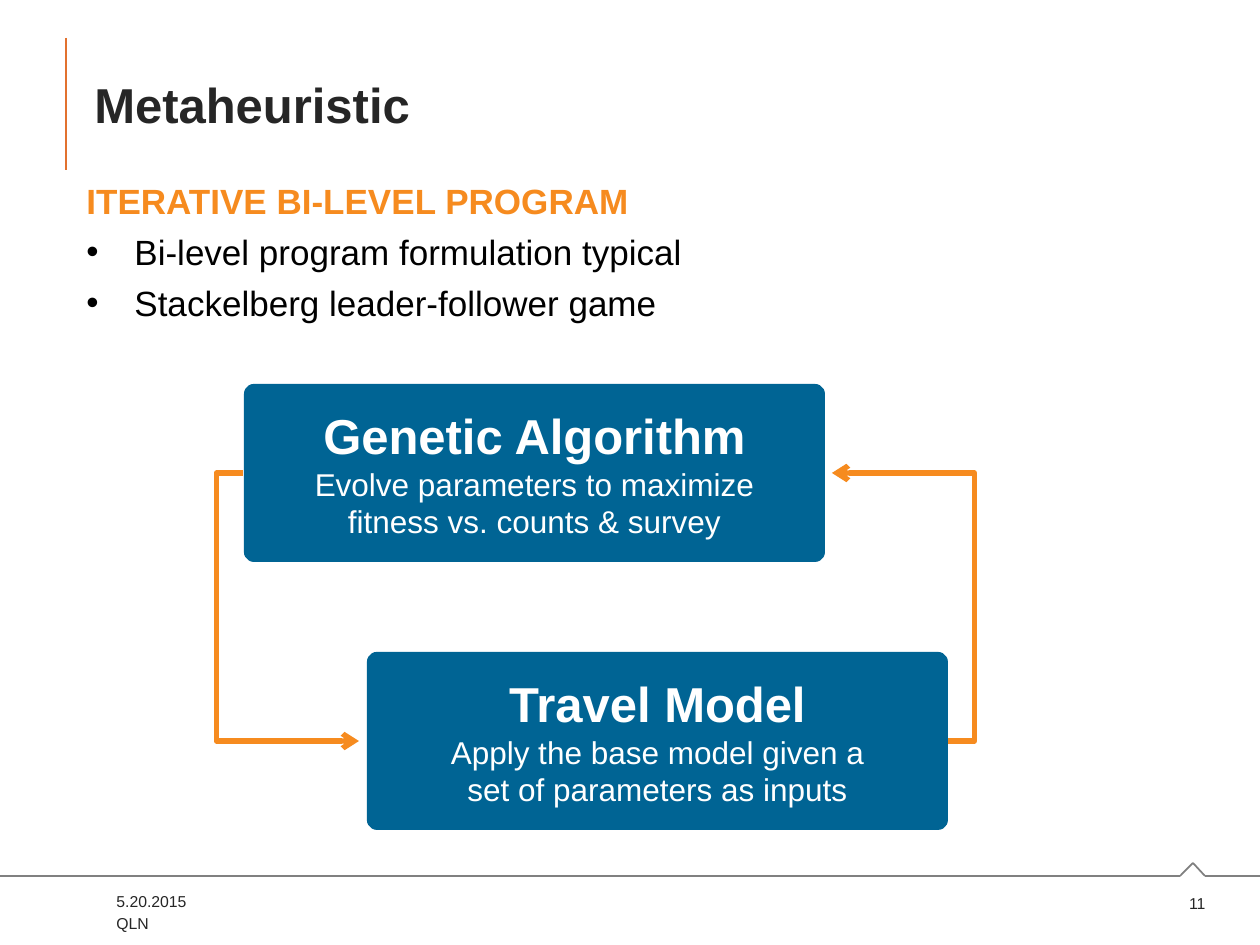
from dataclasses import dataclass
from itertools import pairwise

import pptx
import pptx.dml.color
import pptx.enum.shapes
import pptx.enum.text
import pptx.oxml
import pptx.oxml.ns
import pptx.util
from lxml import etree

EMU_PER_PX = 914400 / 126
COLORS = {
    "orange": "F68B1F",
    "rust": "E2712F",
    "gray": "808080",
    "ink": "262626",
    "black": "000000",
    "white": "FFFFFF",
    "blue": "006494",
}
ALIGN = pptx.enum.text.PP_ALIGN
ANCHOR = pptx.enum.text.MSO_ANCHOR
CONNECTOR = pptx.enum.shapes.MSO_CONNECTOR


@dataclass
class Span:
    text: str
    size: int
    color: str
    bold: bool = False


@dataclass
class Label:
    frame: tuple[int, int, int, int]
    spans: list[Span]
    paragraph: dict
    body: dict


@dataclass
class Stage:
    left: int
    top: int
    title: str
    detail: list[str]


@dataclass
class Stroke:
    start: tuple[int, int]
    end: tuple[int, int]
    color: str
    width: float
    bend: int | None = None


def px(value: float) -> int:
    return round(value * EMU_PER_PX)


def rgb(name: str):
    return pptx.dml.color.RGBColor.from_string(COLORS[name])


def apply(target, values: dict) -> None:
    for name, value in values.items():
        setattr(target, name, value)


def add_element(parent, tag: str, **attributes: str):
    element = etree.SubElement(parent, pptx.oxml.ns.qn(tag))
    for name, value in attributes.items():
        element.set(name, value)
    return element


def write_span(para, span: Span) -> None:
    run = para.add_run()
    run.text = span.text
    apply(run.font, {"name": "Arial", "size": pptx.util.Pt(span.size), "bold": span.bold})
    run.font.color.rgb = rgb(span.color)


def draw_label(page, label: Label):
    box = page.shapes.add_textbox(*map(px, label.frame))
    apply(box.text_frame, {"word_wrap": True, **label.body})
    for index, span in enumerate(label.spans):
        para = box.text_frame.paragraphs[0] if index == 0 else box.text_frame.add_paragraph()
        apply(para, label.paragraph)
        write_span(para, span)
    return box


def draw_bullets(page) -> None:
    box = draw_label(page, Label(
        (74, 170, 1115, 200),
        [
            Span("ITERATIVE BI-LEVEL PROGRAM", 20, "orange", True),
            Span("Bi-level program formulation typical", 20, "black"),
            Span("Stackelberg leader-follower game", 20, "black"),
        ],
        {},
        {"margin_top": px(10)},
    ))
    for para in box.text_frame.paragraphs[1:]:
        para.space_before = pptx.util.Pt(5)
        properties = para._p.get_or_add_pPr()
        properties.set("marL", str(px(48)))
        properties.set("indent", str(px(-48)))
        add_element(properties, "a:buFont", typeface="Arial")
        add_element(properties, "a:buChar", char="•")


def draw_stage(page, stage: Stage) -> None:
    box = page.shapes.add_shape(
        pptx.enum.shapes.MSO_SHAPE.ROUNDED_RECTANGLE,
        *map(px, (stage.left, stage.top, 581, 178)),
    )
    box.adjustments[0] = 0.056
    box.shadow.inherit = False
    box.fill.solid()
    box.fill.fore_color.rgb = rgb("blue")
    box.line.fill.background()
    apply(box.text_frame, {"word_wrap": True, "vertical_anchor": ANCHOR.MIDDLE})
    para = box.text_frame.paragraphs[0]
    para.alignment = ALIGN.CENTER
    write_span(para, Span(stage.title, 28, "white", True))
    for line in stage.detail:
        para.add_line_break()
        write_span(para, Span(line, 18, "white"))


def draw_stroke(page, stroke: Stroke) -> None:
    kind = CONNECTOR.STRAIGHT if stroke.bend is None else CONNECTOR.ELBOW
    line = page.shapes.add_connector(kind, *map(px, (*stroke.start, *stroke.end)))
    line.line.color.rgb = rgb(stroke.color)
    line.line.width = pptx.util.Pt(stroke.width)
    properties = line._element.spPr
    if stroke.bend is not None:
        guides = properties.find(pptx.oxml.ns.qn("a:prstGeom")).get_or_add_avLst()
        add_element(guides, "a:gd", name="adj1", fmla=f"val {stroke.bend}")
        add_element(line.line._get_or_add_ln(), "a:tailEnd", type="arrow")
    add_element(properties, "a:effectLst")


def main() -> None:
    deck = pptx.Presentation()
    apply(deck, {"slide_width": px(1260), "slide_height": px(945)})
    page = deck.slides.add_slide(deck.slide_layouts[6])

    rule_points = [(0, 876), (1180, 876), (1193, 863), (1205, 876), (1260, 876)]
    for start, end in pairwise(rule_points):
        draw_stroke(page, Stroke(start, end, "gray", 1))
    draw_stroke(page, Stroke((66, 38), (66, 170), "rust", 1.5))

    number_body = {
        "word_wrap": False,
        "vertical_anchor": ANCHOR.MIDDLE,
        "auto_size": pptx.enum.text.MSO_AUTO_SIZE.SHAPE_TO_FIT_TEXT,
    }
    labels = [
        Label((1165, 887, 53, 32), [Span("11", 9, "ink")], {"alignment": ALIGN.RIGHT}, number_body),
        Label((104, 886, 335, 32), [Span("5.20.2015", 9, "ink")], {}, {}),
        Label((104, 908, 286, 32), [Span("QLN", 9, "ink")], {}, {}),
        Label((82, 38, 1115, 132), [Span("Metaheuristic", 28, "ink", True)], {},
              {"vertical_anchor": ANCHOR.MIDDLE}),
    ]
    for label in labels:
        draw_label(page, label)
    draw_bullets(page)

    draw_stroke(page, Stroke((243, 473), (359, 741), "orange", 3, -23000))
    stages = [
        Stage(244, 384, "Genetic Algorithm",
              ["Evolve parameters to maximize", "fitness vs. counts & survey"]),
        Stage(367, 652, "Travel Model",
              ["Apply the base model given a", "set of parameters as inputs"]),
    ]
    for stage in stages:
        draw_stage(page, stage)
    draw_stroke(page, Stroke((948, 741), (832, 473), "orange", 3, -23000))

    deck.save("out.pptx")


if __name__ == "__main__":
    main()
